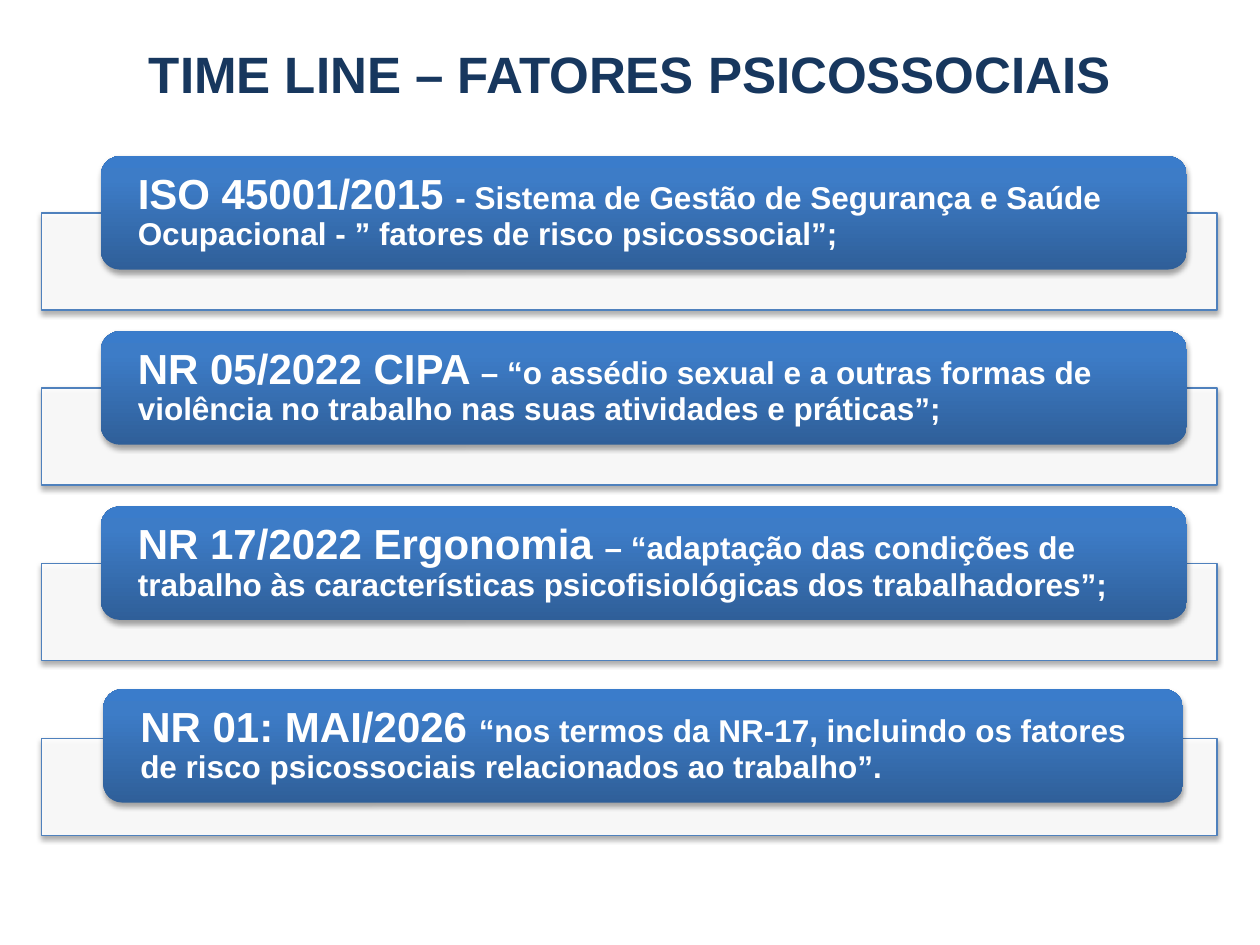
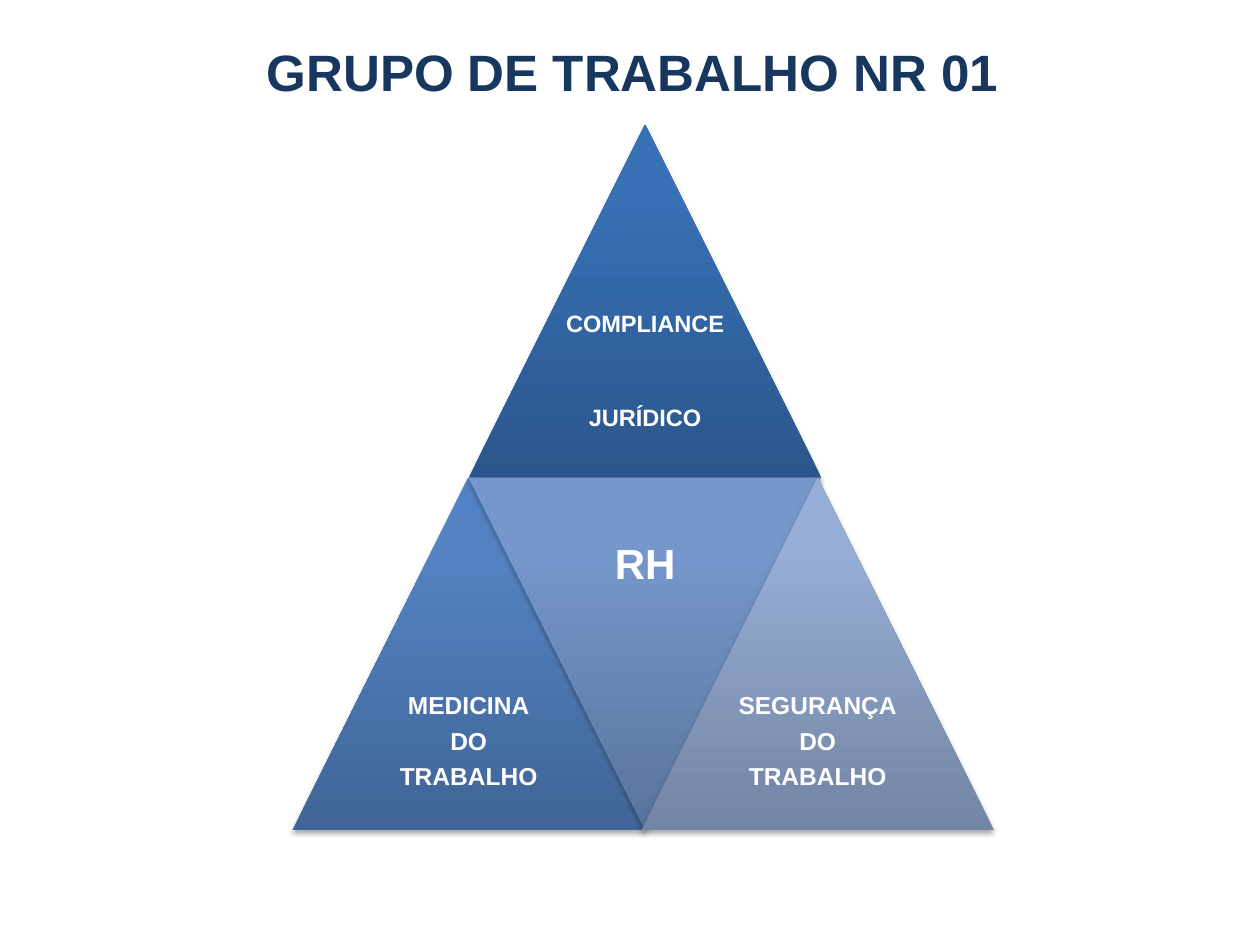
"""Builds two slides: a timeline of psychosocial-factor rules and a work-group pyramid."""
from lxml import etree
from pptx import Presentation
from pptx.dml.color import RGBColor
from pptx.enum.shapes import MSO_SHAPE as SHAPE
from pptx.enum.text import MSO_ANCHOR as ANCHOR, MSO_AUTO_SIZE as AUTO, PP_ALIGN as ALIGN
from pptx.oxml import parse_xml
from pptx.oxml.ns import nsdecls, qn
from pptx.util import Inches, Pt

TIMELINE_TITLE = "TIME LINE – FATORES PSICOSSOCIAIS"
MILESTONES = [
    ("ISO 45001/2015 ", "- Sistema de Gestão de Segurança e Saúde Ocupacional - ” fatores de risco psicossocial”;"),
    ("NR 05/2022 CIPA ", "– “o assédio sexual e a outras formas de violência no trabalho nas suas atividades e práticas”;"),
    ("NR 17/2022 Ergonomia ", "– “adaptação das condições de trabalho às características psicofisiológicas dos trabalhadores”;"),
    ("NR 01: MAI/2026 ", "“nos termos da NR-17, incluindo os fatores de risco psicossociais relacionados ao trabalho”."),
]
GROUP_TITLE = "GRUPO DE TRABALHO NR 01"
TEAMS = {
    "top": ["COMPLIANCE", "JURÍDICO"],
    "left": ["MEDICINA", "DO", "TRABALHO"],
    "centre": ["RH"],
    "right": ["SEGURANÇA", "DO", "TRABALHO"],
}

THEME = {
    "font": "Arial",
    "title": "17375E",
    "text": "FFFFFF",
    "bar": "FFFFFF",
    "bar_line": "4F81BD",
    "card": ("2F5F99", "3D7CC7", "3A7CCB"),
    "top": ("2A568B", "3770B5", "3570B8"),
    "left": ("406596", "5383C3", "5283C6"),
    "centre": ("5A749C", "7597CB", "7498CE"),
    "right": ("7385A4", "96ADD5", "95ADD7"),
    "title_size": 29.2,
    "lead_size": 24,
    "detail_size": 18,
    "top_size": 13.5,
    "team_size": 14,
}

BAR_LEFT, BAR_TOP, BAR_W, BAR_H = 0.33, 1.69, 9.33, 0.77
CARD = (0.8, 8.62, 0.45)
LAST_CARD = (0.82, 8.57, 0.39)
CARD_H, PITCH = 0.9, 1.39
SIDE, APEX_LEFT, APEX_TOP = 2.8, 3.72, 0.99


def apply(obj, values):
    for name, value in values.items():
        setattr(obj, name, value)


def add_run(p, text, size, color=THEME["text"]):
    r = p.add_run()
    r.text = text
    apply(r.font, {"name": THEME["font"], "size": Pt(size), "bold": True})
    r.font.color.rgb = RGBColor.from_string(color)


def add_slide(prs, title, left, top):
    s = prs.slides.add_slide(prs.slide_layouts[5])
    sp = s.shapes.title
    apply(sp, {"left": Inches(left), "top": Inches(top), "width": Inches(8.62), "height": Inches(0.72)})
    tf = sp.text_frame
    apply(tf, {"auto_size": AUTO.NONE, "vertical_anchor": ANCHOR.TOP, "word_wrap": True})
    tf.paragraphs[0].alignment = ALIGN.CENTER
    add_run(tf.paragraphs[0], title, THEME["title_size"], THEME["title"])
    return s


def add_block(s, kind, left, top, width, height):
    sp = s.shapes.add_shape(kind, *map(Inches, (left, top, width, height)))
    sp.shadow.inherit = False
    effects = sp._element.spPr.find(qn("a:effectLst"))
    effects.append(parse_xml(
        f'<a:outerShdw {nsdecls("a")} blurRad="40000" dist="23000" dir="5400000" rotWithShape="0">'
        '<a:srgbClr val="000000"><a:alpha val="35000"/></a:srgbClr></a:outerShdw>'))
    return sp


def fill_gradient(sp, colors):
    sp.line.fill.background()
    sp.fill.gradient()
    grad = sp._element.spPr.find(qn("a:gradFill"))
    stops = "".join(f'<a:gs pos="{pos}"><a:srgbClr val="{color}"/></a:gs>'
                    for pos, color in zip((0, 80000, 100000), colors))
    new = parse_xml(f'<a:gradFill {nsdecls("a")} rotWithShape="1"><a:gsLst>{stops}</a:gsLst>'
                    '<a:lin ang="16200000" scaled="0"/></a:gradFill>')
    grad.getparent().replace(grad, new)


def set_frame(sp, side, end, anchor=ANCHOR.MIDDLE):
    tf = sp.text_frame
    apply(tf, {"word_wrap": True, "vertical_anchor": anchor,
               "margin_left": Inches(side), "margin_right": Inches(side),
               "margin_top": Inches(end), "margin_bottom": Inches(end)})
    return tf


def add_milestone(s, row, lead, detail, card):
    top = BAR_TOP + row * PITCH
    bar = add_block(s, SHAPE.RECTANGLE, BAR_LEFT, top, BAR_W, BAR_H)
    bar.fill.solid()
    bar.fill.fore_color.rgb = RGBColor.from_string(THEME["bar"])
    color = bar._element.spPr.find(qn("a:solidFill"))[0]
    etree.SubElement(color, qn("a:alpha")).set("val", "90000")
    bar.line.color.rgb = RGBColor.from_string(THEME["bar_line"])
    bar.line.width = Pt(0.75)

    left, width, rise = card
    sp = add_block(s, SHAPE.ROUNDED_RECTANGLE, left, top - rise, width, CARD_H)
    fill_gradient(sp, THEME["card"])
    p = set_frame(sp, 0.25, 0).paragraphs[0]
    apply(p, {"alignment": ALIGN.LEFT, "line_spacing": 0.9})
    add_run(p, lead, THEME["lead_size"])
    add_run(p, detail, THEME["detail_size"])


def add_team(s, name, kind, left, top, size, gap=5, inset=0.06, anchor=ANCHOR.MIDDLE):
    sp = add_block(s, kind, left, top, SIDE, SIDE)
    fill_gradient(sp, THEME[name])
    tf = set_frame(sp, 0.06, inset, anchor)
    for i, line in enumerate(TEAMS[name]):
        p = tf.add_paragraph() if i else tf.paragraphs[0]
        apply(p, {"alignment": ALIGN.CENTER, "line_spacing": 0.9, "space_before": Pt(gap if i else 0)})
        add_run(p, line, size)


def main():
    prs = Presentation()
    apply(prs, {"slide_width": Inches(10), "slide_height": Inches(7.5)})

    s = add_slide(prs, TIMELINE_TITLE, 0.69, 0.29)
    for row, (lead, detail) in enumerate(MILESTONES):
        add_milestone(s, row, lead, detail, LAST_CARD if row == len(MILESTONES) - 1 else CARD)

    s = add_slide(prs, GROUP_TITLE, 0.71, 0.27)
    base = APEX_TOP + SIDE
    triangle = SHAPE.ISOSCELES_TRIANGLE
    add_team(s, "top", triangle, APEX_LEFT, APEX_TOP, THEME["top_size"], 39, 0.09, ANCHOR.TOP)
    add_team(s, "left", triangle, APEX_LEFT - SIDE / 2, base, THEME["team_size"])
    add_team(s, "centre", SHAPE.FLOWCHART_MERGE, APEX_LEFT, base, THEME["lead_size"])
    add_team(s, "right", triangle, 5.09, base, THEME["team_size"])
    prs.save("out.pptx")


if __name__ == "__main__":
    main()
